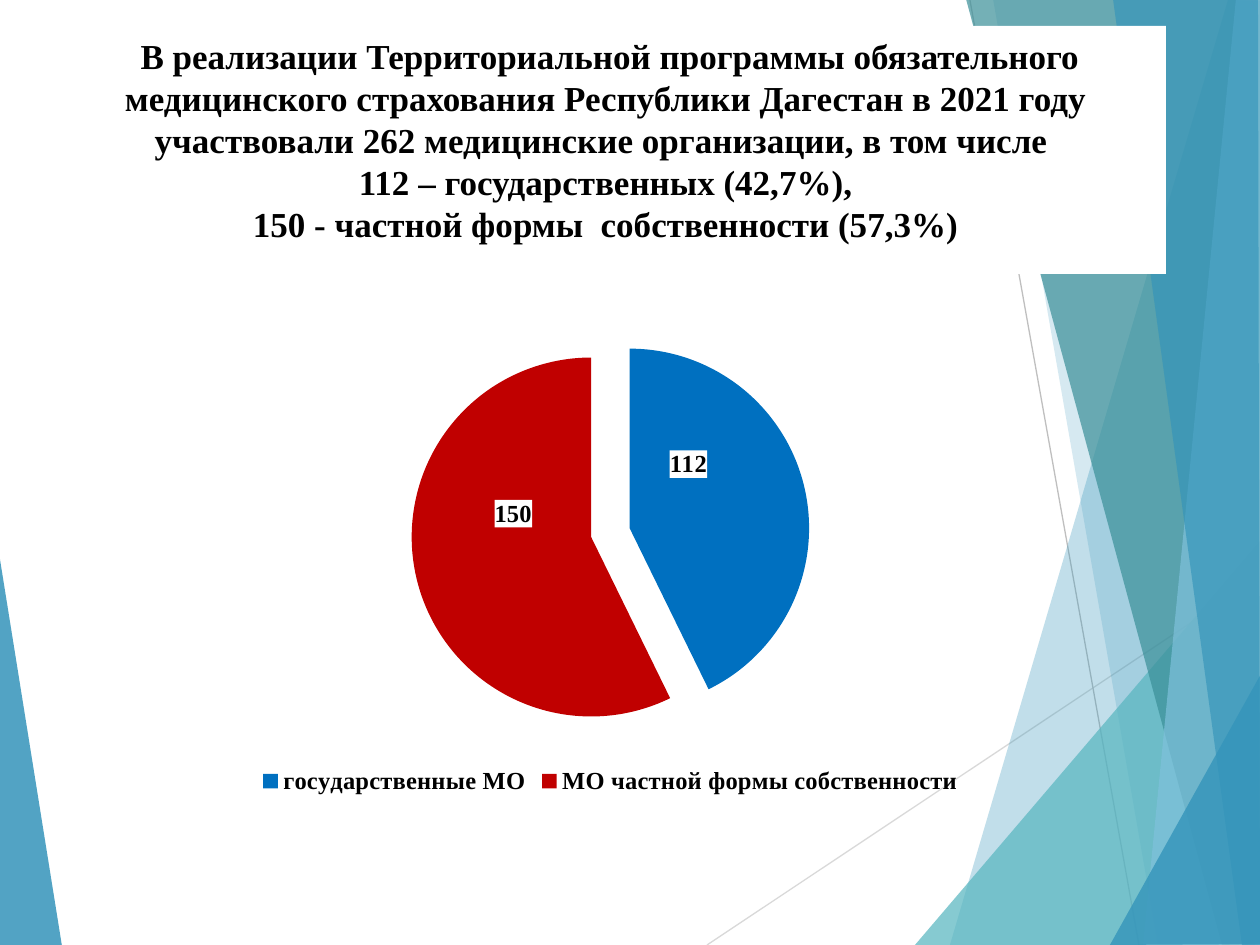
"""Build the slide on medical organisations in the compulsory insurance programme."""
from dataclasses import dataclass

from lxml import etree
from pptx import Presentation
from pptx import util as u
from pptx.chart.data import CategoryChartData
from pptx.dml.color import RGBColor
from pptx.enum import chart as ch, shapes, text
from pptx.oxml import parse_xml
from pptx.oxml.ns import nsdecls, qn

PX = 914400 / 126
FONT = "Times New Roman"
COLORS = {
    "blue": "3494BA", "teal": "58B6C0", "deep": "3A8F98", "sky": "7FC1DB",
    "light_line": "D9D9D9", "grey_line": "BFBFBF", "white": "FFFFFF",
    "black": "000000", "state": "0070C0", "private": "C00000",
}
TITLE_LINES = (
    "В реализации Территориальной программы обязательного медицинского "
    "страхования Республики Дагестан в 2021 году  участвовали 262 "
    "медицинские организации, в том числе  ",
    "112 – государственных (42,7%), ",
    "150 - частной формы  собственности (57,3%) ",
)


@dataclass(frozen=True)
class Facet:
    color: str
    opacity: int
    points: tuple


@dataclass(frozen=True)
class Ray:
    color: str
    start: tuple
    end: tuple


@dataclass(frozen=True)
class Sector:
    name: str
    count: int
    color: str
    label_shift: tuple


LEFT_FACET = Facet("blue", 85, ((-1, 553), (62, 946), (-1, 945)))
RAYS = (
    Ray("light_line", (707, 945), (1261, 576)),
    Ray("grey_line", (970, 0), (1139, 945)),
)
RIGHT_FACETS = (
    Facet("blue", 30, ((1228, 0), (950, 945), (1262, 946), (1261, 1))),
    Facet("blue", 20, ((993, -1), (1158, 945), (1261, 945), (1261, -1))),
    Facet("teal", 72, ((915, 945), (1260, 541), (1261, 945))),
    Facet("deep", 70, ((966, -1), (1222, 945), (1261, 944), (1261, -1))),
    Facet("sky", 70, ((1236, -1), (1143, 945), (1261, 945), (1260, -1))),
    Facet("blue", 65, ((1113, -1), (1242, 945), (1260, 945), (1258, -1))),
    Facet("blue", 80, ((1110, 945), (1261, 674), (1261, 944))),
)
SECTORS = (
    Sector("государственные МО", 112, "state", (-0.03, -0.09)),
    Sector("МО частной формы собственности", 150, "private", (0.01, -0.09)),
)


def px(*lengths: int) -> list:
    return [u.Emu(round(length * PX)) for length in lengths]


def rgb(name: str) -> RGBColor:
    return RGBColor.from_string(COLORS[name])


def paint(fill, color: str) -> None:
    fill.solid()
    fill.fore_color.rgb = rgb(color)


def style_font(font, size: int) -> None:
    for key, value in {"name": FONT, "size": u.Pt(size), "bold": True}.items():
        setattr(font, key, value)
    font.color.rgb = rgb("black")


def draw_facet(slide, facet: Facet) -> None:
    builder = slide.shapes.build_freeform(*facet.points[0], scale=PX)
    builder.add_line_segments(facet.points[1:], close=True)
    shape = builder.convert_to_shape()
    shape.shadow.inherit = False
    shape.line.fill.background()
    paint(shape.fill, facet.color)
    tint = shape._element.spPr.find(qn("a:solidFill"))[0]
    etree.SubElement(tint, qn("a:alpha"), val=str(facet.opacity * 1000))


def draw_ray(slide, ray: Ray) -> None:
    line = slide.shapes.add_connector(
        shapes.MSO_CONNECTOR.STRAIGHT, *px(*ray.start, *ray.end))
    line.line.color.rgb = rgb(ray.color)
    line.line.width = u.Pt(0.75)
    etree.SubElement(line._element.spPr, qn("a:effectLst"))


def draw_title(slide) -> None:
    title = slide.shapes.title
    slide.shapes._spTree.append(title._element)
    box = dict(zip(("left", "top", "width", "height"), px(54, 26, 1112, 248)))
    for key, value in box.items():
        setattr(title, key, value)
    paint(title.fill, "white")
    frame = title.text_frame
    layout = {"word_wrap": True, "vertical_anchor": text.MSO_ANCHOR.TOP,
              "auto_size": text.MSO_AUTO_SIZE.NONE, "margin_top": px(8)[0]}
    for key, value in layout.items():
        setattr(frame, key, value)
    heading = frame.paragraphs[0]
    heading.alignment = text.PP_ALIGN.CENTER
    heading.line_spacing = u.Pt(24)
    for number, line in enumerate(TITLE_LINES):
        if number:
            heading.add_line_break()
        run = heading.add_run()
        run.text = line
        style_font(run.font, 20)


def manual_layout(modes: str, **sizes: float):
    values = "".join(f'<c:{key} val="{size}"/>' for key, size in sizes.items())
    return parse_xml(f'<c:layout {nsdecls("c")}><c:manualLayout>{modes}{values}'
                     '</c:manualLayout></c:layout>')


def label_sector(point, sector: Sector) -> None:
    paint(point.format.fill, sector.color)
    point.data_label.position = ch.XL_LABEL_POSITION.CENTER
    style_font(point.data_label.font, 14)


def draw_pie(slide) -> None:
    data = CategoryChartData()
    data.categories = [sector.name for sector in SECTORS]
    data.add_series("Series 1", [sector.count for sector in SECTORS])
    pie = slide.shapes.add_chart(
        ch.XL_CHART_TYPE.PIE, *px(134, 314, 953, 486), data).chart
    style_font(pie.font, 14)
    pie.has_title = False
    pie.has_legend = True
    pie.legend.position = ch.XL_LEGEND_POSITION.BOTTOM
    pie.legend.include_in_layout = False
    style_font(pie.legend.font, 14)

    series = pie.plots[0].series[0]
    series._element.find(qn("c:tx")).addnext(
        parse_xml(f'<c:explosion {nsdecls("c")} val="11"/>'))
    for number, sector in enumerate(SECTORS):
        label_sector(series.points[number], sector)
    for label, sector in zip(pie.element.xpath(".//c:dLbl"), SECTORS):
        x, y = sector.label_shift
        label.find(qn("c:idx")).addnext(manual_layout("", x=x, y=y))
        label.find(qn("c:txPr")).addprevious(parse_xml(
            f'<c:spPr {nsdecls("c", "a")}><a:solidFill><a:srgbClr '
            f'val="{COLORS["white"]}"/></a:solidFill></c:spPr>'))

    plot_area = pie.element.find(".//" + qn("c:plotArea"))
    for old in plot_area.findall(qn("c:layout")):
        plot_area.remove(old)
    modes = ('<c:layoutTarget val="inner"/><c:xMode val="edge"/>'
             '<c:yMode val="edge"/>')
    plot_area.insert(0, manual_layout(modes, x=0.29, y=0.04, w=0.42, h=0.82))


def main() -> None:
    deck = Presentation()
    deck.slide_width, deck.slide_height = px(1260, 945)
    slide = deck.slides.add_slide(deck.slide_layouts[5])
    draw_facet(slide, LEFT_FACET)
    for ray in RAYS:
        draw_ray(slide, ray)
    for facet in RIGHT_FACETS:
        draw_facet(slide, facet)
    draw_title(slide)
    draw_pie(slide)
    deck.save("out.pptx")


if __name__ == "__main__":
    main()
